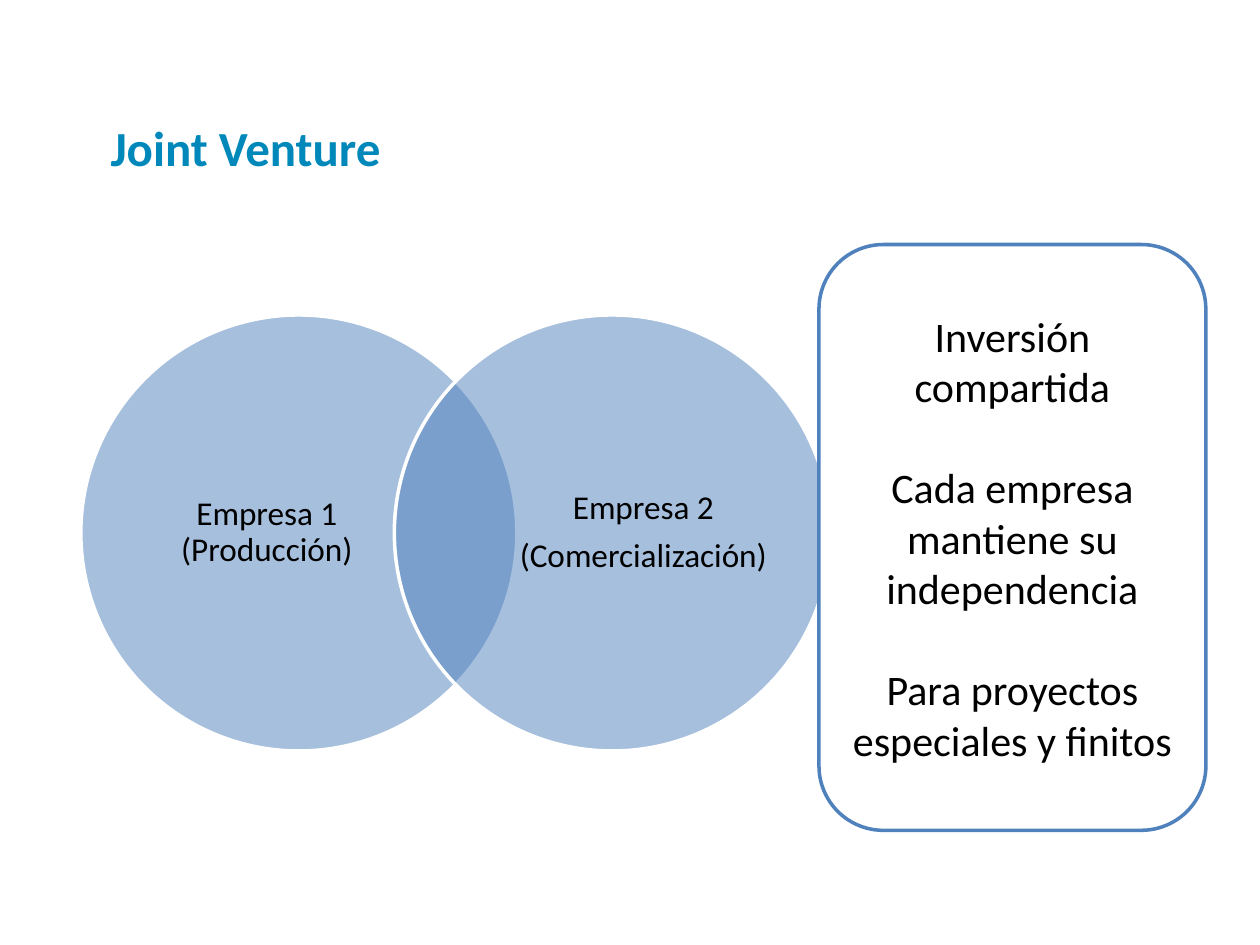
import pptx
import pptx.util
import pptx.dml.color
import pptx.enum.shapes
import pptx.enum.text
import pptx.oxml.ns
from lxml import etree

Cm = pptx.util.Cm
Pt = pptx.util.Pt
SHAPE = pptx.enum.shapes.MSO_SHAPE
ALIGN = pptx.enum.text.PP_ALIGN
COLORS = {"title": "0088BA", "blue": "4F81BD", "white": "FFFFFF", "text": "000000"}


def rgb(name):
    """Return the named colour."""
    return pptx.dml.color.RGBColor.from_string(COLORS[name])


def write(tf, lines, size, color="text", bold=False, align=ALIGN.CENTER,
          spacing=None, before=0, after=0, insets=(0.25, 0.13)):
    """Fill a text frame with one paragraph per line."""
    tf.word_wrap = True
    tf.vertical_anchor = pptx.enum.text.MSO_ANCHOR.MIDDLE
    tf.margin_left = tf.margin_right = Cm(insets[0])
    tf.margin_top = tf.margin_bottom = Cm(insets[1])
    for i, line in enumerate(lines):
        p = tf.paragraphs[0] if i == 0 else tf.add_paragraph()
        p.alignment = align
        p.line_spacing = spacing
        p.space_before = Pt(before if i else 0)
        p.space_after = Pt(after)
        r = p.add_run()
        r.text = line
        r.font.name = "Calibri"
        r.font.size = Pt(size)
        r.font.bold = bold
        r.font.color.rgb = rgb(color)


def add_box(s, kind, box, fill, line, alpha=None):
    """Add a filled and outlined shape, optionally see-through."""
    sp = s.shapes.add_shape(kind, *map(Cm, box))
    sp.shadow.inherit = False
    sp.fill.solid()
    sp.fill.fore_color.rgb = rgb(fill)
    sp.line.color.rgb = rgb(line)
    sp.line.width = Pt(2)
    if alpha:
        clr = sp.fill._xPr.find(".//" + pptx.oxml.ns.qn("a:srgbClr"))
        etree.SubElement(clr, pptx.oxml.ns.qn("a:alpha"), val=str(alpha * 1000))
    return sp


def add_title(s, box, text):
    """Place the slide title."""
    sp = s.shapes.add_textbox(*map(Cm, box))
    write(sp.text_frame, [text], 28, color="title", bold=True, align=ALIGN.LEFT)


def add_venn(s, box, companies):
    """Place two overlapping circles with labels clear of the overlap."""
    left, top, width, size = box
    label_w, label_h = 5.06, 6.71
    for i, (lines, inset) in enumerate(zip(companies, (1.22, 2.49))):
        x = left + i * (width - size)
        add_box(s, SHAPE.OVAL, (x, top, size, size), "blue", "white", alpha=50)
        label = (x + inset, top + (size - label_h) / 2, label_w, label_h)
        sp = s.shapes.add_textbox(*map(Cm, label))
        write(sp.text_frame, lines, 19, spacing=0.9, after=6.65, insets=(0, 0))


def add_features(s, box, lines):
    """Place the rounded panel of features."""
    sp = add_box(s, SHAPE.ROUNDED_RECTANGLE, box, "white", "blue")
    write(sp.text_frame, lines, 24, before=29)


def main():
    """Build and save the slide."""
    prs = pptx.Presentation()
    prs.slide_width, prs.slide_height = Cm(25.4), Cm(19.05)
    s = prs.slides.add_slide(prs.slide_layouts[6])
    add_title(s, (1.98, 1.98, 20.52, 1.96), "Joint Venture")
    add_venn(s, (1.63, 6.35, 15.11, 8.79),
             [["Empresa 1 (Producción)"], ["Empresa 2", "(Comercialización)"]])
    add_features(s, (16.51, 4.93, 7.8, 11.81),
                 ["Inversión compartida",
                  "Cada empresa mantiene su independencia",
                  "Para proyectos especiales y finitos"])
    prs.save("out.pptx")


if __name__ == "__main__":
    main()
